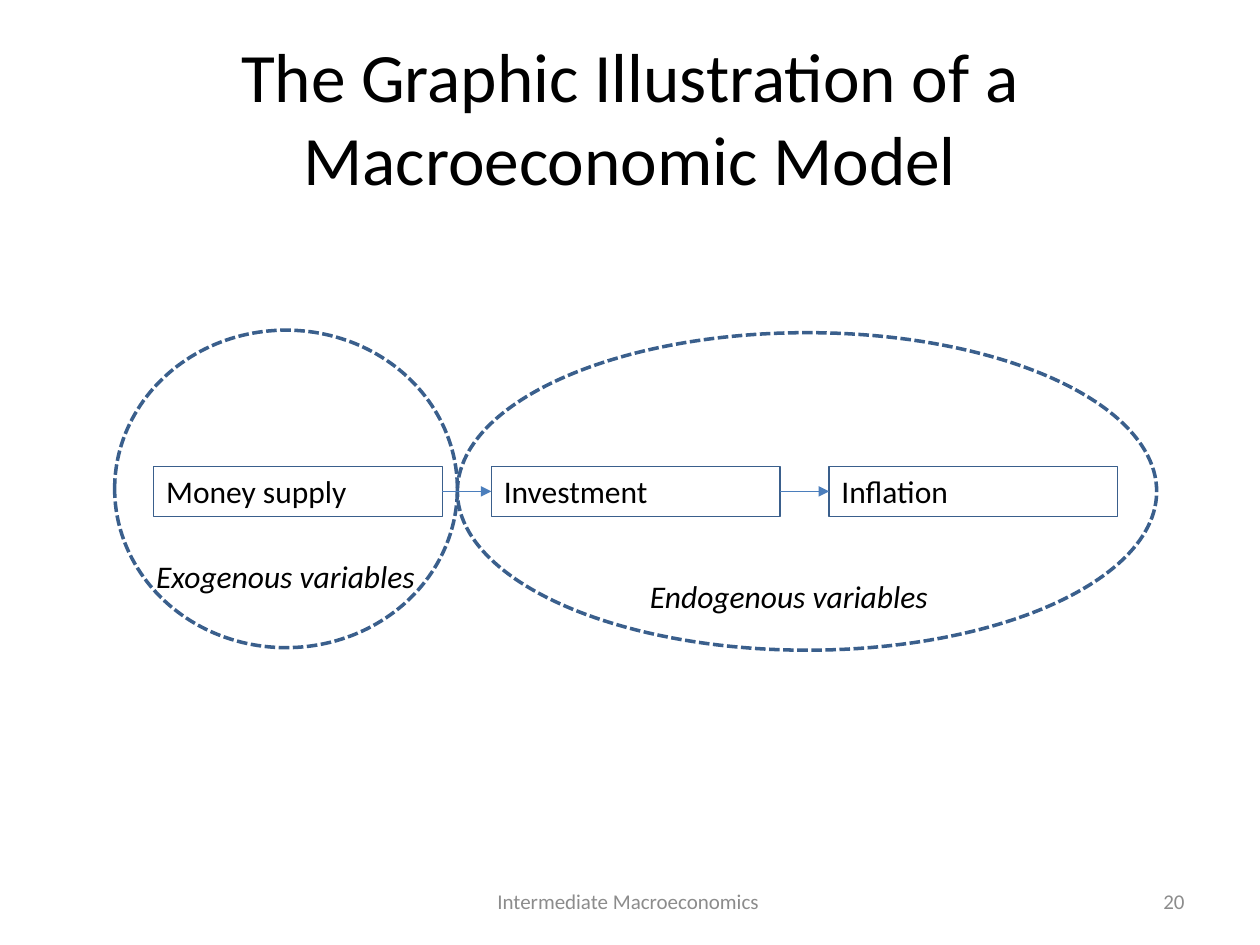
from pptx import Presentation
from pptx.dml.color import RGBColor
from pptx.enum.dml import MSO_LINE
from pptx.enum.shapes import MSO_CONNECTOR, MSO_SHAPE
from pptx.enum.text import MSO_ANCHOR, MSO_AUTO_SIZE, PP_ALIGN
from pptx.oxml.ns import qn
from pptx.util import Inches, Pt
from lxml import etree

LEFT, CENTER, RIGHT = PP_ALIGN.LEFT, PP_ALIGN.CENTER, PP_ALIGN.RIGHT
TOP, MIDDLE = MSO_ANCHOR.TOP, MSO_ANCHOR.MIDDLE
RECTANGLE, OVAL = MSO_SHAPE.RECTANGLE, MSO_SHAPE.OVAL
STRAIGHT, DASH, NO_FIT = MSO_CONNECTOR.STRAIGHT, MSO_LINE.SQUARE_DOT, MSO_AUTO_SIZE.NONE

COLORS = {"text": "000000", "footer": "8C8C8C", "outline": "3A5F8C", "arrow": "4B7EBC"}

deck = Presentation()
deck.slide_width, deck.slide_height = Inches(10), Inches(7.5)
page = deck.slides.add_slide(deck.slide_layouts[5])  # Title Only

# Grid of 100 columns by 75 rows
COLUMN = deck.slide_width / 100
ROW = deck.slide_height / 75


def place(left, top, width, height):
    return [int(left * COLUMN), int(top * ROW), int(width * COLUMN), int(height * ROW)]


def write(box, text, size, color="text", align=LEFT, anchor=TOP, italic=False):
    frame = box.text_frame
    frame.word_wrap = True
    frame.auto_size = NO_FIT
    frame.vertical_anchor = anchor
    para = frame.paragraphs[0]
    para.alignment = align
    span = para.add_run()
    span.text = text
    span.font.name = "Calibri"
    span.font.size = Pt(size)
    span.font.italic = italic
    span.font.color.rgb = RGBColor.from_string(COLORS[color])


# Title
title = page.shapes.title
title.left, title.top, title.width, title.height = place(5, 3, 90, 12.5)
write(title, "The Graphic Illustration of a Macroeconomic Model", 39.6,
      align=CENTER, anchor=MIDDLE)

# Footer and page number
for text, left, width, align in [("Intermediate Macroeconomics ", 34.2, 31.7, CENTER),
                                 ("20", 71.7, 23.3, RIGHT)]:
    footer = page.shapes.add_textbox(*place(left, 69.5, width, 4))
    write(footer, text, 12, "footer", align, MIDDLE)

# Dashed ovals grouping the variables, side by side
for left, top, width in [(9.1, 26.2, 27.2), (36.3, 26.4, 55.5)]:
    oval = page.shapes.add_shape(OVAL, *place(left, top, width, 25.2))
    oval.shadow.inherit = False
    oval.fill.background()
    oval.line.color.rgb = RGBColor.from_string(COLORS["outline"])
    oval.line.width = Pt(2)
    oval.line.dash_style = DASH

# Chain of variables, joined by arrows
FIRST, STEP, BOX_WIDTH, BOX_TOP, BOX_HEIGHT = 12.2, 26.8, 22.9, 37, 4
previous = None
for index, name in enumerate(["Money supply", "Investment", "Inflation"]):
    box = page.shapes.add_shape(
        RECTANGLE, *place(FIRST + index * STEP, BOX_TOP, BOX_WIDTH, BOX_HEIGHT))
    box.shadow.inherit = False
    box.fill.background()
    box.line.color.rgb = RGBColor.from_string(COLORS["outline"])
    box.line.width = Pt(0.75)
    write(box, name, 18)
    if previous is not None:
        arrow = page.shapes.add_connector(STRAIGHT, 0, 0, 0, 0)
        arrow.begin_connect(previous, 3)
        arrow.end_connect(box, 1)
        arrow.line.color.rgb = RGBColor.from_string(COLORS["arrow"])
        arrow.line.width = Pt(0.75)
        properties = arrow._element.spPr
        etree.SubElement(properties.find(qn("a:ln")), qn("a:tailEnd"), type="triangle")
        etree.SubElement(properties, qn("a:effectLst"))
    previous = box

# Group labels
for text, left, top in [("Exogenous variables", 11.4, 43.7),
                        ("Endogenous variables", 50.6, 45.3)]:
    label = page.shapes.add_textbox(*place(left, top, 28.3, 4))
    write(label, text, 18, italic=True)

deck.save("out.pptx")
